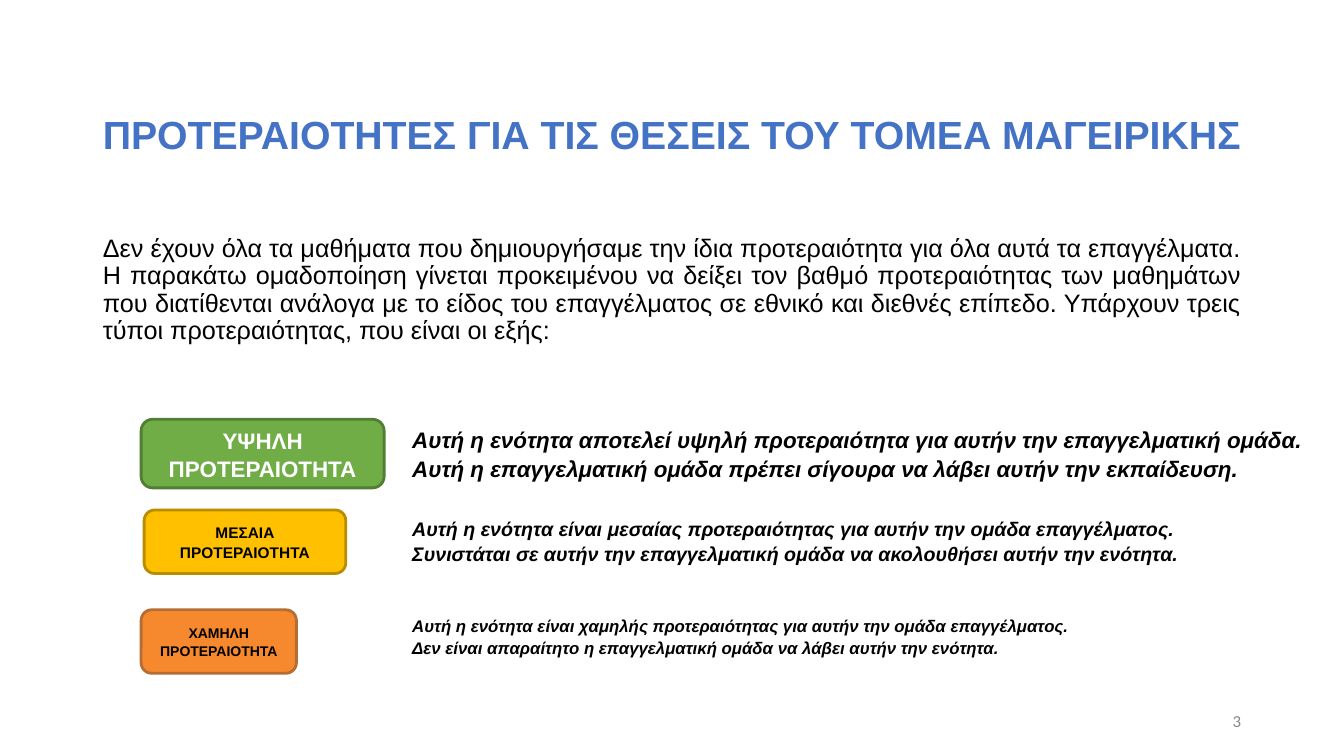
from dataclasses import dataclass

from lxml import etree
from pptx import Presentation
from pptx.dml.color import RGBColor
from pptx.enum.shapes import MSO_SHAPE
from pptx.enum.text import MSO_ANCHOR, MSO_AUTO_SIZE, PP_ALIGN
from pptx.oxml.ns import qn
from pptx.util import Inches, Pt

ROUNDED = MSO_SHAPE.ROUNDED_RECTANGLE
TOP, MIDDLE = MSO_ANCHOR.TOP, MSO_ANCHOR.MIDDLE
LEFT, CENTER, RIGHT, JUSTIFY = PP_ALIGN.LEFT, PP_ALIGN.CENTER, PP_ALIGN.RIGHT, PP_ALIGN.JUSTIFY

TITLE = "ΠΡΟΤΕΡΑΙΟΤΗΤΕΣ ΓΙΑ ΤΙΣ ΘΕΣΕΙΣ ΤΟΥ ΤΟΜΕΑ ΜΑΓΕΙΡΙΚΗΣ"
INTRODUCTION = (
    "Δεν έχουν όλα τα μαθήματα που δημιουργήσαμε την ίδια προτεραιότητα για όλα αυτά τα "
    "επαγγέλματα. Η παρακάτω ομαδοποίηση γίνεται προκειμένου να δείξει τον βαθμό "
    "προτεραιότητας των μαθημάτων που διατίθενται ανάλογα με το είδος του επαγγέλματος σε "
    "εθνικό και διεθνές επίπεδο. Υπάρχουν τρεις τύποι προτεραιότητας, που είναι οι εξής:"
)
PAGE_NUMBER = "3"
PRIORITIES = [
    {
        "label": "ΥΨΗΛΗ ΠΡΟΤΕΡΑΙΟΤΗΤΑ",
        "lines": [
            "Αυτή η ενότητα αποτελεί υψηλή προτεραιότητα για αυτήν την επαγγελματική ομάδα.",
            "Αυτή η επαγγελματική ομάδα πρέπει σίγουρα να λάβει αυτήν την εκπαίδευση.",
        ],
        "fill": "70AD47", "line": "517E33", "label_color": "FFFFFF",
        "label_size": 16, "text_size": 16,
        "label_box": (1.4, 4.16, 2.41, 0.68), "text_extent": (9.28, 0.97),
    },
    {
        "label": "ΜΕΣΑΙΑ ΠΡΟΤΕΡΑΙΟΤΗΤΑ",
        "lines": [
            "Αυτή η ενότητα είναι μεσαίας προτεραιότητας για αυτήν την ομάδα επαγγέλματος. "
            "Συνιστάται σε αυτήν την επαγγελματική ομάδα να ακολουθήσει αυτήν την ενότητα.",
        ],
        "fill": "FFC000", "line": "BA8C00", "label_color": "000000",
        "label_size": 11, "text_size": 14,
        "label_box": (1.43, 5.06, 2, 0.63), "text_extent": (7.96, 0.61),
    },
    {
        "label": "ΧΑΜΗΛΗ ΠΡΟΤΕΡΑΙΟΤΗΤΑ",
        "lines": [
            "Αυτή η ενότητα είναι χαμηλής προτεραιότητας για αυτήν την ομάδα επαγγέλματος.",
            "Δεν είναι απαραίτητο η επαγγελματική ομάδα να λάβει αυτήν την ενότητα.",
        ],
        "fill": "F6882E", "line": "B46D33", "label_color": "000000",
        "label_size": 10, "text_size": 12,
        "label_box": (1.4, 6.05, 1.54, 0.63), "text_extent": (8.76, 0.53),
    },
]


@dataclass(frozen=True)
class Theme:
    font: str = "Arial"
    number_font: str = "Calibri"
    title_color: str = "4472C4"
    text_color: str = "000000"
    number_color: str = "888888"
    title_size: int = 28
    body_size: int = 18
    number_size: int = 12
    heading_spacing: float = 0.9
    priority_spacing: float = 1.07
    outline_width: int = 2


THEME = Theme()
SLIDE_WIDTH, SLIDE_HEIGHT = 13.33, 7.5
MARGIN = 0.92
CONTENT_WIDTH = SLIDE_WIDTH - 2 * MARGIN
TEXT_COLUMN = 3.99
NUMBER_WIDTH = 3
TITLE_BOX = (MARGIN, 0.79, 11.87, 1.56)
TITLE_BOTTOM_INSET = 0.47
BODY_BOX = (MARGIN, 2.29, CONTENT_WIDTH, 1.56)
NUMBER_BOX = (SLIDE_WIDTH - MARGIN - NUMBER_WIDTH, 6.95, NUMBER_WIDTH, 0.4)


def inches(box):
    return [Inches(length) for length in box]


def place(shape, box):
    shape.left, shape.top, shape.width, shape.height = inches(box)


def write(shape, lines, size, color, align=LEFT, anchor=TOP, spacing=1.0,
          bold=False, italic=False, font=THEME.font):
    """Fill a shape with one unbulleted paragraph per line."""
    frame = shape.text_frame
    frame.word_wrap = True
    frame.auto_size = MSO_AUTO_SIZE.NONE
    frame.vertical_anchor = anchor
    frame.margin_left = frame.margin_right = Inches(0.1)
    frame.margin_top = frame.margin_bottom = Inches(0.05)
    for index, line in enumerate(lines):
        paragraph = frame.add_paragraph() if index else frame.paragraphs[0]
        properties = paragraph._p.get_or_add_pPr()
        properties.set("marL", "0")
        properties.set("indent", "0")
        etree.SubElement(properties, qn("a:buNone"))
        paragraph.alignment = align
        paragraph.line_spacing = spacing
        paragraph.space_before = paragraph.space_after = Pt(0)
        run = paragraph.add_run()
        run.text = line
        run.font.name = font
        run.font.size = Pt(size)
        run.font.bold = bold
        run.font.italic = italic
        run.font.color.rgb = RGBColor.from_string(color)


def add_headings(slide):
    title, body = slide.shapes.title, slide.placeholders[1]
    place(title, TITLE_BOX)
    write(title, [TITLE], THEME.title_size, THEME.title_color, anchor=MIDDLE,
          spacing=THEME.heading_spacing, bold=True)
    title.text_frame.margin_bottom = Inches(TITLE_BOTTOM_INSET)
    place(body, BODY_BOX)
    write(body, [INTRODUCTION], THEME.body_size, THEME.text_color, JUSTIFY,
          spacing=THEME.heading_spacing)


def add_priority(slide, priority):
    label = slide.shapes.add_shape(ROUNDED, *inches(priority["label_box"]))
    label.shadow.inherit = False
    label.fill.solid()
    label.fill.fore_color.rgb = RGBColor.from_string(priority["fill"])
    label.line.color.rgb = RGBColor.from_string(priority["line"])
    label.line.width = Pt(THEME.outline_width)
    write(label, [priority["label"]], priority["label_size"], priority["label_color"],
          CENTER, MIDDLE, THEME.priority_spacing, bold=True)

    top = priority["label_box"][1]
    description = slide.shapes.add_textbox(*inches((TEXT_COLUMN, top, *priority["text_extent"])))
    write(description, priority["lines"], priority["text_size"], THEME.text_color,
          spacing=THEME.priority_spacing, bold=True, italic=True)


def main():
    presentation = Presentation()
    presentation.slide_width = Inches(SLIDE_WIDTH)
    presentation.slide_height = Inches(SLIDE_HEIGHT)
    slide = presentation.slides.add_slide(presentation.slide_layouts[1])
    add_headings(slide)
    for priority in PRIORITIES:
        add_priority(slide, priority)
    number = slide.shapes.add_textbox(*inches(NUMBER_BOX))
    write(number, [PAGE_NUMBER], THEME.number_size, THEME.number_color, RIGHT, MIDDLE,
          font=THEME.number_font)
    presentation.save("out.pptx")


if __name__ == "__main__":
    main()
